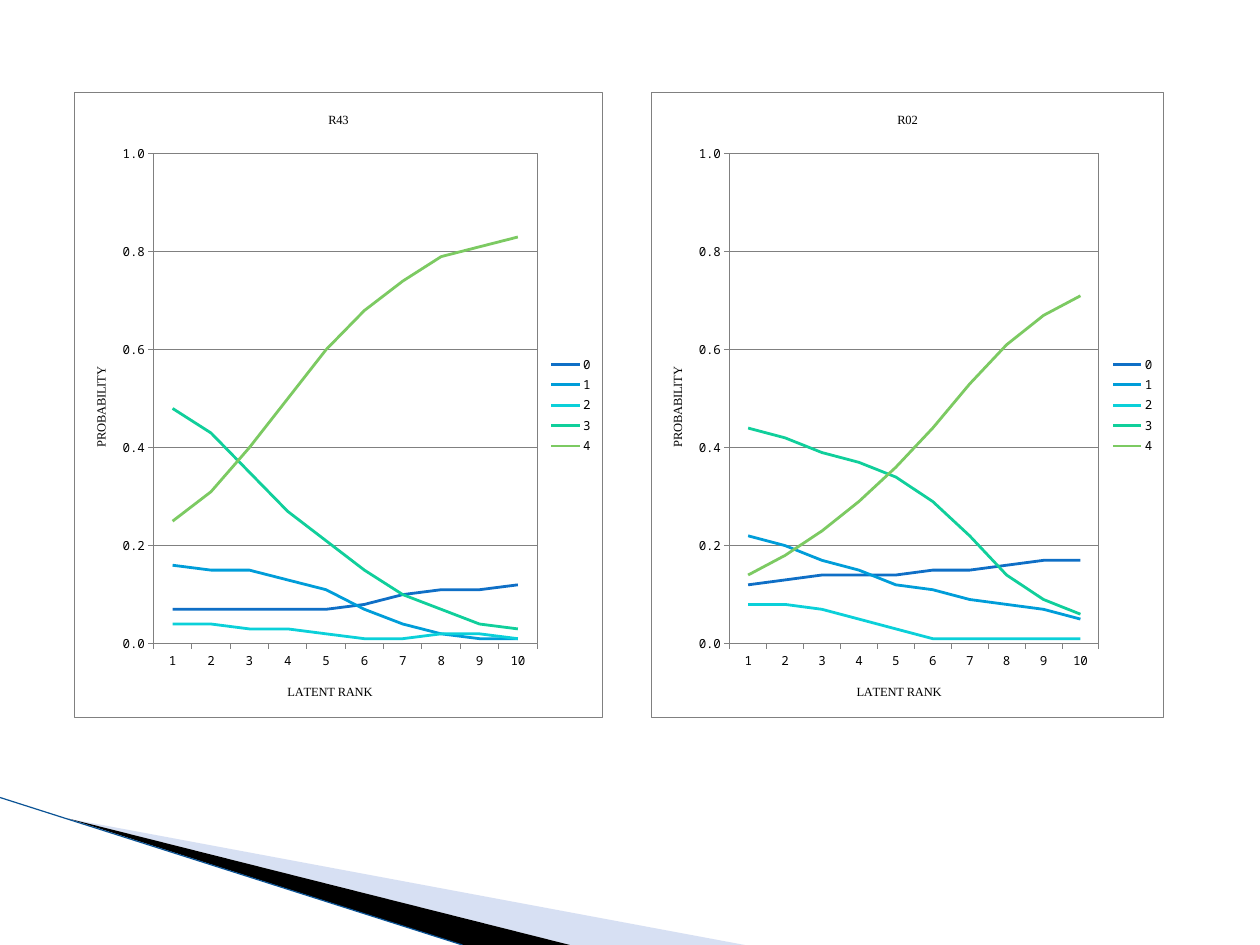
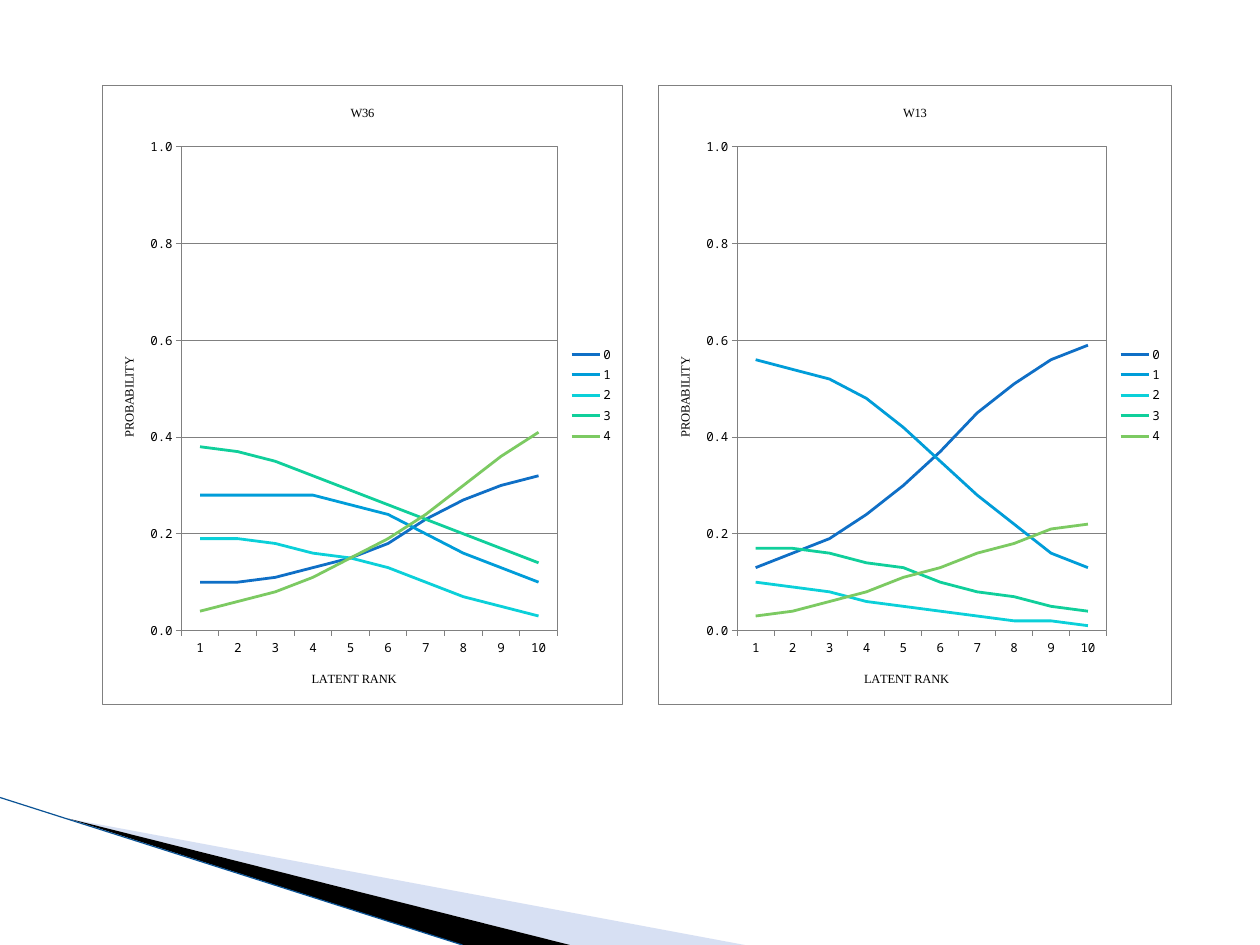
from lxml import etree
from pptx import Presentation
from pptx.chart.data import CategoryChartData
from pptx.dml.color import RGBColor
from pptx.enum.chart import XL_CHART_TYPE, XL_LEGEND_POSITION, XL_TICK_MARK
from pptx.enum.shapes import MSO_CONNECTOR
from pptx.oxml import parse_xml
from pptx.oxml.ns import nsdecls, qn
from pptx.util import Pt

LINE_CHART = XL_CHART_TYPE.LINE
LEGEND_RIGHT = XL_LEGEND_POSITION.RIGHT
TICK_OUT, TICK_NONE = XL_TICK_MARK.OUTSIDE, XL_TICK_MARK.NONE
STRAIGHT = MSO_CONNECTOR.STRAIGHT

SLIDE_W, SLIDE_H = 1008, 756
LABEL_FONT, TITLE_FONT = "Noto Sans Mono", "Times New Roman"
BLACK, GRAY, WHITE = "000000", "808080", "FFFFFF"
PALE_WEDGE, EDGE = "9DB2E1", "0B5395"
CATEGORY_COLORS = ["0F6FC6", "009DD9", "0BD0D9", "10CF9B", "7CCA62"]
RANKS = [str(rank) for rank in range(1, 11)]
# Space between the chart frame and the plot: left, top, right, bottom
PLOT_MARGINS = (63, 49, 52, 59.5)

# Probability of each response category (0 to 4) by latent rank
R02 = [
    [0.12, 0.13, 0.14, 0.14, 0.14, 0.15, 0.15, 0.16, 0.17, 0.17],
    [0.22, 0.20, 0.17, 0.15, 0.12, 0.11, 0.09, 0.08, 0.07, 0.05],
    [0.08, 0.08, 0.07, 0.05, 0.03, 0.01, 0.01, 0.01, 0.01, 0.01],
    [0.44, 0.42, 0.39, 0.37, 0.34, 0.29, 0.22, 0.14, 0.09, 0.06],
    [0.14, 0.18, 0.23, 0.29, 0.36, 0.44, 0.53, 0.61, 0.67, 0.71],
]
R43 = [
    [0.07, 0.07, 0.07, 0.07, 0.07, 0.08, 0.10, 0.11, 0.11, 0.12],
    [0.16, 0.15, 0.15, 0.13, 0.11, 0.07, 0.04, 0.02, 0.01, 0.01],
    [0.04, 0.04, 0.03, 0.03, 0.02, 0.01, 0.01, 0.02, 0.02, 0.01],
    [0.48, 0.43, 0.35, 0.27, 0.21, 0.15, 0.10, 0.07, 0.04, 0.03],
    [0.25, 0.31, 0.40, 0.50, 0.60, 0.68, 0.74, 0.79, 0.81, 0.83],
]
W13 = [
    [0.13, 0.16, 0.19, 0.24, 0.30, 0.37, 0.45, 0.51, 0.56, 0.59],
    [0.56, 0.54, 0.52, 0.48, 0.42, 0.35, 0.28, 0.22, 0.16, 0.13],
    [0.10, 0.09, 0.08, 0.06, 0.05, 0.04, 0.03, 0.02, 0.02, 0.01],
    [0.17, 0.17, 0.16, 0.14, 0.13, 0.10, 0.08, 0.07, 0.05, 0.04],
    [0.03, 0.04, 0.06, 0.08, 0.11, 0.13, 0.16, 0.18, 0.21, 0.22],
]
W36 = [
    [0.10, 0.10, 0.11, 0.13, 0.15, 0.18, 0.23, 0.27, 0.30, 0.32],
    [0.28, 0.28, 0.28, 0.28, 0.26, 0.24, 0.20, 0.16, 0.13, 0.10],
    [0.19, 0.19, 0.18, 0.16, 0.15, 0.13, 0.10, 0.07, 0.05, 0.03],
    [0.38, 0.37, 0.35, 0.32, 0.29, 0.26, 0.23, 0.20, 0.17, 0.14],
    [0.04, 0.06, 0.08, 0.11, 0.15, 0.19, 0.24, 0.30, 0.36, 0.41],
]
# Each slide: item name, probabilities, frame (left, top, width, height)
SLIDES = [
    [("R02", R02, (520.5, 73.75, 411, 501)), ("R43", R43, (59.5, 73.75, 422.5, 501))],
    [("W13", W13, (526.5, 68.25, 411, 496)), ("W36", W36, (81.75, 68.25, 416.5, 496))],
]


def rgb(color):
    return RGBColor.from_string(color)


def format_font(font, name=LABEL_FONT, size=10, color=BLACK, bold=False):
    font.name, font.size, font.bold = name, Pt(size), bold
    font.color.rgb = rgb(color)


def write_text(frame, text, **font_format):
    run = frame.paragraphs[0].add_run()
    run.text = text
    format_font(run.font, **font_format)


def style_line(line, color, width):
    line.color.rgb = rgb(color)
    line.width = Pt(width)


def reframe(shape, left, top, width, height):
    """Give a freeform another frame while its outline stays in place."""
    shift_x, shift_y = shape.left - Pt(left), shape.top - Pt(top)
    outline = next(shape._element.iter(qn("a:path")))
    outline.set("w", str(Pt(width)))
    outline.set("h", str(Pt(height)))
    for point in outline.iter(qn("a:pt")):
        point.set("x", str(int(point.get("x")) + shift_x))
        point.set("y", str(int(point.get("y")) + shift_y))
    shape.left, shape.top = Pt(left), Pt(top)
    shape.width, shape.height = Pt(width), Pt(height)


def add_wedge(slide, corners, frame, color, alpha=None):
    points = [(Pt(x), Pt(y)) for x, y in corners]
    builder = slide.shapes.build_freeform(*points[0], scale=1.0)
    builder.add_line_segments(points[1:], close=True)
    wedge = builder.convert_to_shape()
    reframe(wedge, *frame)
    wedge.shadow.inherit = False
    wedge.fill.solid()
    wedge.fill.fore_color.rgb = rgb(color)
    wedge.line.fill.background()
    if alpha is not None:
        fill_color = next(wedge._element.spPr.iter(qn("a:srgbClr")))
        etree.SubElement(fill_color, qn("a:alpha")).set("val", str(alpha * 1000))


def add_corner_rays(slide, left, top, width, height):
    """Wedges that fan out from the left edge to the bottom edge."""
    bottom = top + height
    tip = (left + 55, top + 17)
    black_end = (left + 456, bottom)
    add_wedge(slide, [tip, (left + width, bottom), black_end],
              (left + 79, top - 86.5, 419, 159), PALE_WEDGE, alpha=40)
    add_wedge(slide, [tip, black_end, (left + 370, bottom)],
              (left - 6, top, 419, 92), BLACK)
    edge = slide.shapes.add_connector(
        STRAIGHT, Pt(left), Pt(top), Pt(left + 370), Pt(bottom))
    style_line(edge.line, EDGE, 0.95)
    etree.SubElement(edge._element.spPr, qn("a:effectLst"))


def frame_xml(width):
    return parse_xml(
        f'<c:spPr {nsdecls("c", "a")}>'
        f'<a:solidFill><a:srgbClr val="{WHITE}"/></a:solidFill>'
        f'<a:ln w="{Pt(width)}"><a:solidFill><a:srgbClr val="{GRAY}"/></a:solidFill></a:ln>'
        '</c:spPr>')


def frame_chart(chart, width, height):
    """Draw the chart and plot borders and fix the plot inside its margins."""
    space = chart._chartSpace
    space.chart.addnext(frame_xml(0.75))
    corners = etree.Element(qn("c:roundedCorners"))
    corners.set("val", "0")
    space.find(qn("c:date1904")).addnext(corners)

    plot_area = space.chart.plotArea
    plot_area.append(frame_xml(0.75))
    for layout in plot_area.findall(qn("c:layout")):
        plot_area.remove(layout)
    left, top, right, bottom = PLOT_MARGINS
    layout = etree.Element(qn("c:layout"))
    manual = etree.SubElement(layout, qn("c:manualLayout"))
    settings = {
        "layoutTarget": "inner", "xMode": "edge", "yMode": "edge",
        "x": left / width, "y": top / height,
        "w": (width - left - right) / width,
        "h": (height - top - bottom) / height,
    }
    for tag, value in settings.items():
        etree.SubElement(manual, qn(f"c:{tag}")).set("val", str(value))
    plot_area.insert(0, layout)


def style_axis(axis, title):
    axis.major_tick_mark, axis.minor_tick_mark = TICK_OUT, TICK_NONE
    style_line(axis.format.line, GRAY, 0.75)
    format_font(axis.tick_labels.font)
    write_text(axis.axis_title.text_frame, title, name=TITLE_FONT)


def add_item_chart(slide, item, probabilities, left, top, width, height):
    data = CategoryChartData(number_format="0.00")
    data.categories = RANKS
    for category, values in enumerate(probabilities):
        data.add_series(str(category), values)
    chart = slide.shapes.add_chart(
        LINE_CHART, Pt(left), Pt(top), Pt(width), Pt(height), data).chart
    format_font(chart.font)
    write_text(chart.chart_title.text_frame, item, name=TITLE_FONT)
    chart.chart_title.include_in_layout = False

    # Legend
    chart.has_legend = True
    chart.legend.position = LEGEND_RIGHT
    chart.legend.include_in_layout = False
    format_font(chart.legend.font)

    # Axes
    style_axis(chart.category_axis, "LATENT RANK")
    probability = chart.value_axis
    style_axis(probability, "PROBABILITY")
    turned = probability.axis_title.text_frame._txBody.bodyPr
    turned.set("rot", "-5400000")
    turned.set("vert", "horz")
    probability.minimum_scale, probability.maximum_scale = 0, 1
    probability.major_unit = 0.2
    probability.tick_labels.number_format = "0.0"
    probability.tick_labels.number_format_is_linked = False
    probability.has_major_gridlines = True
    style_line(probability.major_gridlines.format.line, GRAY, 0.75)

    # Curves
    plot = chart.plots[0]
    plot.vary_by_categories = False
    for curve, color in zip(plot.series, CATEGORY_COLORS):
        curve.smooth = False
        style_line(curve.format.line, color, 2.25)
    frame_chart(chart, width, height)


def main():
    deck = Presentation()
    deck.slide_width, deck.slide_height = Pt(SLIDE_W), Pt(SLIDE_H)
    for items in SLIDES:
        slide = deck.slides.add_slide(deck.slide_layouts[6])
        add_corner_rays(slide, 0, 638, 596, SLIDE_H - 638)
        for item, probabilities, box in items:
            add_item_chart(slide, item, probabilities, *box)
    deck.save("out.pptx")


if __name__ == "__main__":
    main()
